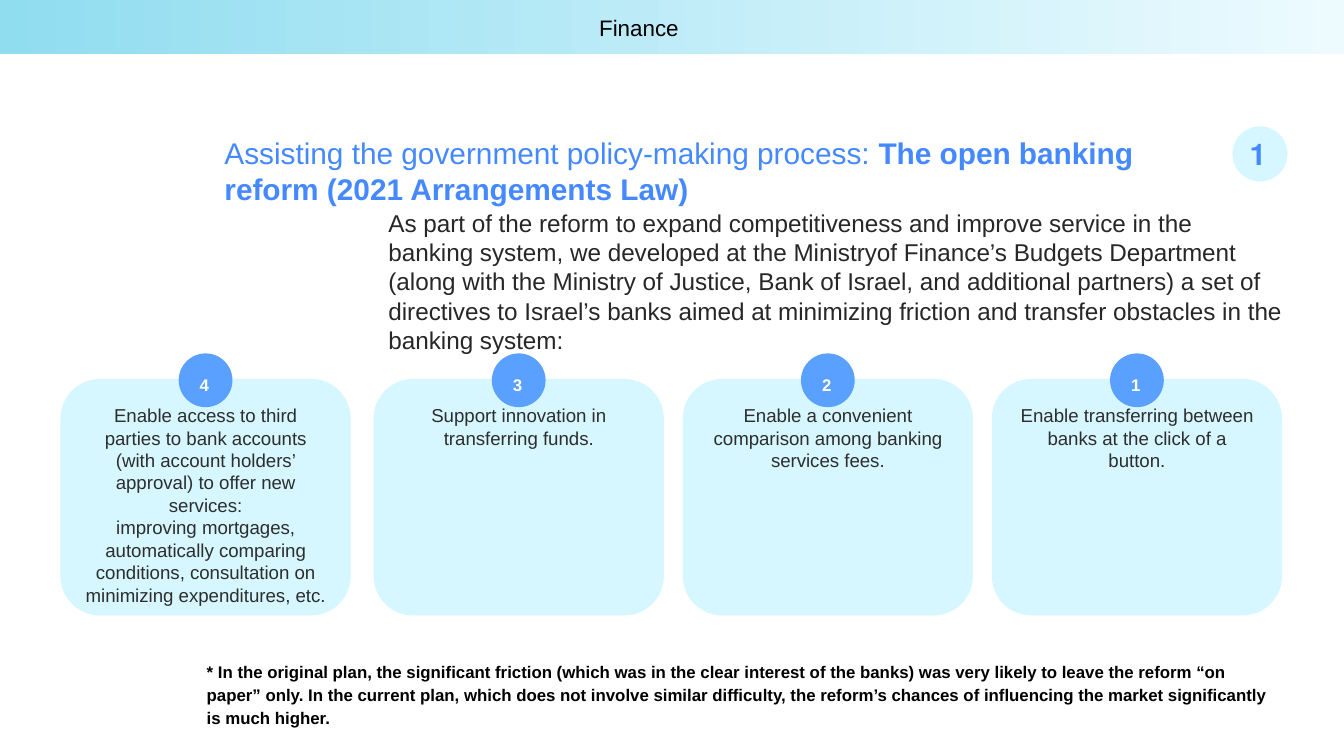
from dataclasses import dataclass

from pptx import Presentation
from pptx.dml.color import RGBColor as Rgb
from pptx.enum.shapes import MSO_SHAPE as Kind
from pptx.enum.text import MSO_ANCHOR as Anchor, MSO_AUTO_SIZE as Auto, PP_ALIGN as Align
from pptx.oxml.ns import qn
from pptx.util import Pt

UNIT = 4572


@dataclass(frozen=True)
class Theme:
    """Colours, font and type sizes of the slide."""
    font: str = "Arial"
    black: str = "000000"
    white: str = "FFFFFF"
    ink: str = "272727"
    soft: str = "2D2D2D"
    blue: str = "4489FF"
    dot: str = "5AA0FF"
    pale: str = "D6F7FF"
    start: str = "90DDF0"
    end: str = "EDFBFF"
    head: int = 16
    body: int = 13
    top: int = 12
    card: int = 10
    small: int = 9


LOOK = Theme()

HEAD = [
    ("Assisting the government policy-making process: ", False),
    ("The open banking reform (2021 Arrangements Law)", True),
]
INTRO = (
    "As part of the reform to expand competitiveness and improve service in the "
    "banking system, we developed at the Ministryof Finance’s Budgets Department "
    "(along with the Ministry of Justice, Bank of Israel, and additional partners) "
    "a set of directives to Israel’s banks aimed at minimizing friction and "
    "transfer obstacles in the banking system:"
)
CARDS = [
    (1476, "Enable transferring between banks at the click of a button."),
    (1016, "Enable a convenient comparison among banking services fees."),
    (556, "Support innovation in transferring funds."),
    (90, "Enable access to third parties to bank accounts (with account holders’ "
         "approval) to offer new services:\nimproving mortgages, automatically "
         "comparing conditions, consultation on minimizing expenditures, etc."),
]
NOTE = (
    "* In the original plan, the significant friction (which was in the clear "
    "interest of the banks) was very likely to leave the reform “on paper” only. "
    "In the current plan, which does not involve similar difficulty, the reform’s "
    "chances of influencing the market significantly is much higher."
)


def px(*nums):
    """Turn px lengths into EMU."""
    return [num * UNIT for num in nums]


def write(shape, text, size, color, bold=False, align=Align.LEFT, anchor=Anchor.TOP,
          pad=(20, 20, 20, 20), grow=False, line=None, before=0, after=0):
    """Fill a shape with one paragraph given as a string or as (text, bold) pairs."""
    frame = shape.text_frame
    frame.word_wrap = True
    frame.auto_size = Auto.SHAPE_TO_FIT_TEXT if grow else Auto.NONE
    frame.vertical_anchor = anchor
    (frame.margin_left, frame.margin_top,
     frame.margin_right, frame.margin_bottom) = px(*pad)
    para = frame.paragraphs[0]
    para.alignment = align
    para.space_before, para.space_after = Pt(before), Pt(after)
    if line:
        para.line_spacing = line
    for part, heavy in [(text, bold)] if isinstance(text, str) else text:
        for row, words in enumerate(part.split("\n")):
            if row:
                para.add_line_break()
            run = para.add_run()
            run.text = words
            font = run.font
            font.name, font.size, font.bold = LOOK.font, Pt(size), heavy
            font.color.rgb = Rgb.from_string(color)
    return para


def draw(shapes, kind, box, color=None):
    """Add a preset shape without line or shadow."""
    shape = shapes.add_shape(kind, *px(*box))
    shape.shadow.inherit = False
    shape.line.fill.background()
    if color:
        shape.fill.solid()
        shape.fill.fore_color.rgb = Rgb.from_string(color)
    return shape


def place(shape, box):
    """Move a placeholder to a box."""
    shape.left, shape.top, shape.width, shape.height = px(*box)


def banner(slide, x, y, w, h):
    """Draw the shaded top band with its label."""
    band = draw(slide.shapes, Kind.RECTANGLE, (x, y - 2, w, h))
    band.fill.gradient()
    band.fill.gradient_angle = 0
    for stop, color in zip(band.fill.gradient_stops, (LOOK.start, LOOK.end)):
        stop.color.rgb = Rgb.from_string(color)
    label = slide.shapes.add_textbox(*px(x + 872, y, w - 872, h))
    write(label, "Finance", LOOK.top, LOOK.black, anchor=Anchor.MIDDLE,
          pad=(20, 20, 40, 20))


def header(slide, x, y, w, h):
    """Place the title and its round badge."""
    title = slide.shapes.title
    place(title, (x, y, w, h))
    write(title, HEAD, LOOK.head, LOOK.blue, pad=(0, 20, 0, 20), grow=True)
    badge = draw(slide.shapes, Kind.OVAL, (x + 1500, y + 8, 82, 82), LOOK.pale)
    para = write(badge, "1", LOOK.head, LOOK.blue, bold=True, align=Align.RIGHT,
                 anchor=Anchor.MIDDLE)
    para._p.get_or_add_pPr().set("rtl", "1")


def intro(slide, x, y, w, h):
    """Place the body paragraph without a bullet."""
    body = slide.placeholders[1]
    place(body, (x, y, w, h))
    para = write(body, INTRO, LOOK.body, LOOK.ink, pad=(0, 20, 0, 20), grow=True)
    props = para._p.get_or_add_pPr()
    props.set("marL", "0")
    props.set("indent", "0")
    props.append(props.makeelement(qn("a:buNone"), {}))


def card(slide, x, y, w, h, num, text):
    """Draw one card with a numbered dot on its top edge."""
    group = slide.shapes.add_group_shape().shapes
    panel = draw(group, Kind.ROUNDED_RECTANGLE, (x, y, w, h), LOOK.pale)
    panel.adjustments[0] = 0.167
    write(panel, text, LOOK.card, LOOK.soft, align=Align.CENTER)
    size = 80
    dot = draw(group, Kind.OVAL, (x + (w - size) // 2, y - 38, size, size), LOOK.dot)
    write(dot, str(num), LOOK.small, LOOK.white, bold=True)


def footer(slide, x, y, w, h):
    """Place the closing note."""
    note = slide.shapes.add_textbox(*px(x, y, w, h))
    write(note, NOTE, LOOK.small, LOOK.black, bold=True, grow=True,
          line=1.15, before=12, after=17)


def main():
    """Build and save the slide."""
    deck = Presentation()
    deck.slide_width, deck.slide_height = px(2000, 1125)
    slide = deck.slides.add_slide(deck.slide_layouts[1])
    banner(slide, 0, 0, 2000, 82)
    intro(slide, 578, 290, 1330, 260)
    for num, (left, text) in enumerate(CARDS, 1):
        card(slide, left, 564, 432, 352, num, text)
    footer(slide, 288, 960, 1620, 106)
    header(slide, 334, 180, 1476, 148)
    deck.save("out.pptx")


if __name__ == "__main__":
    main()
